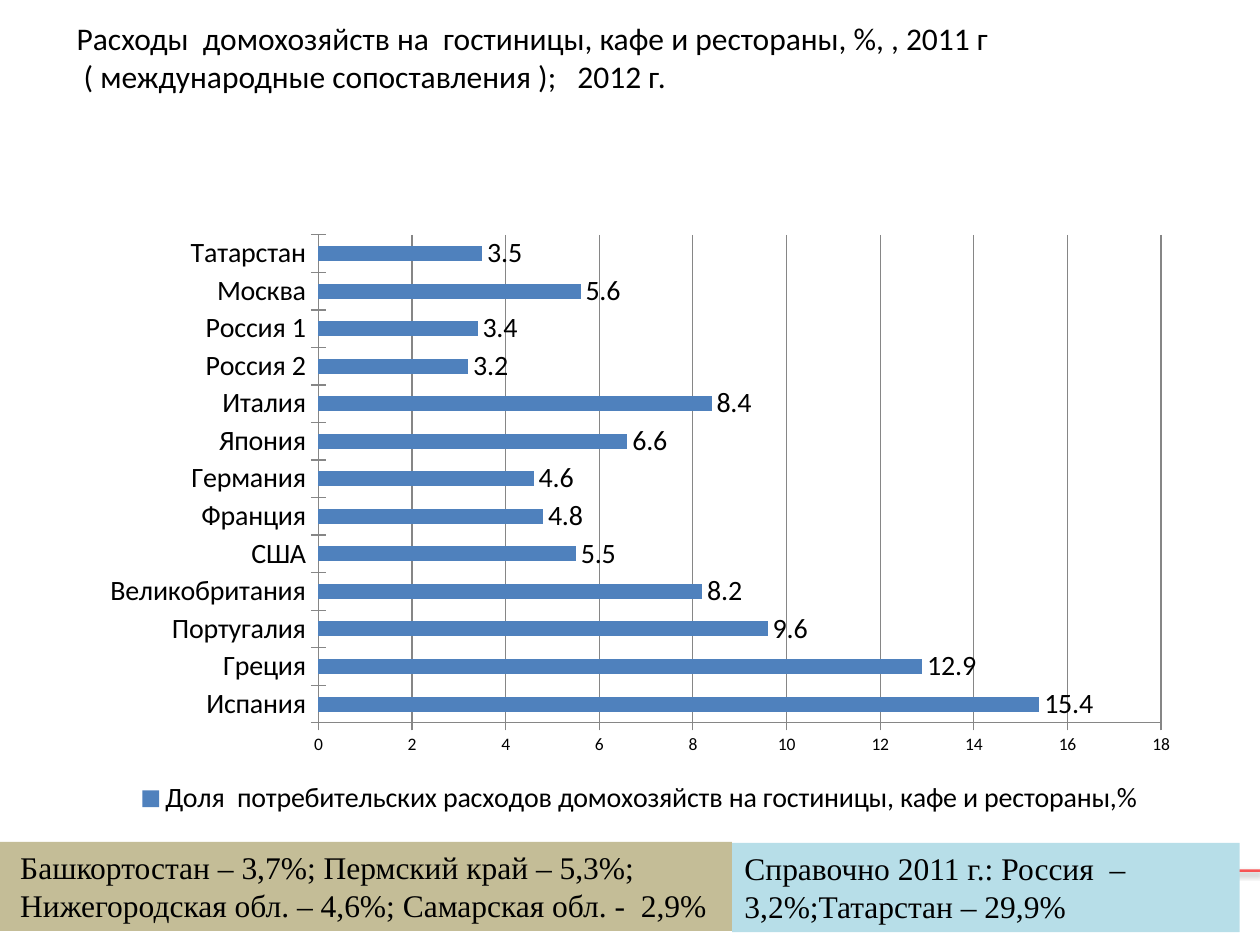
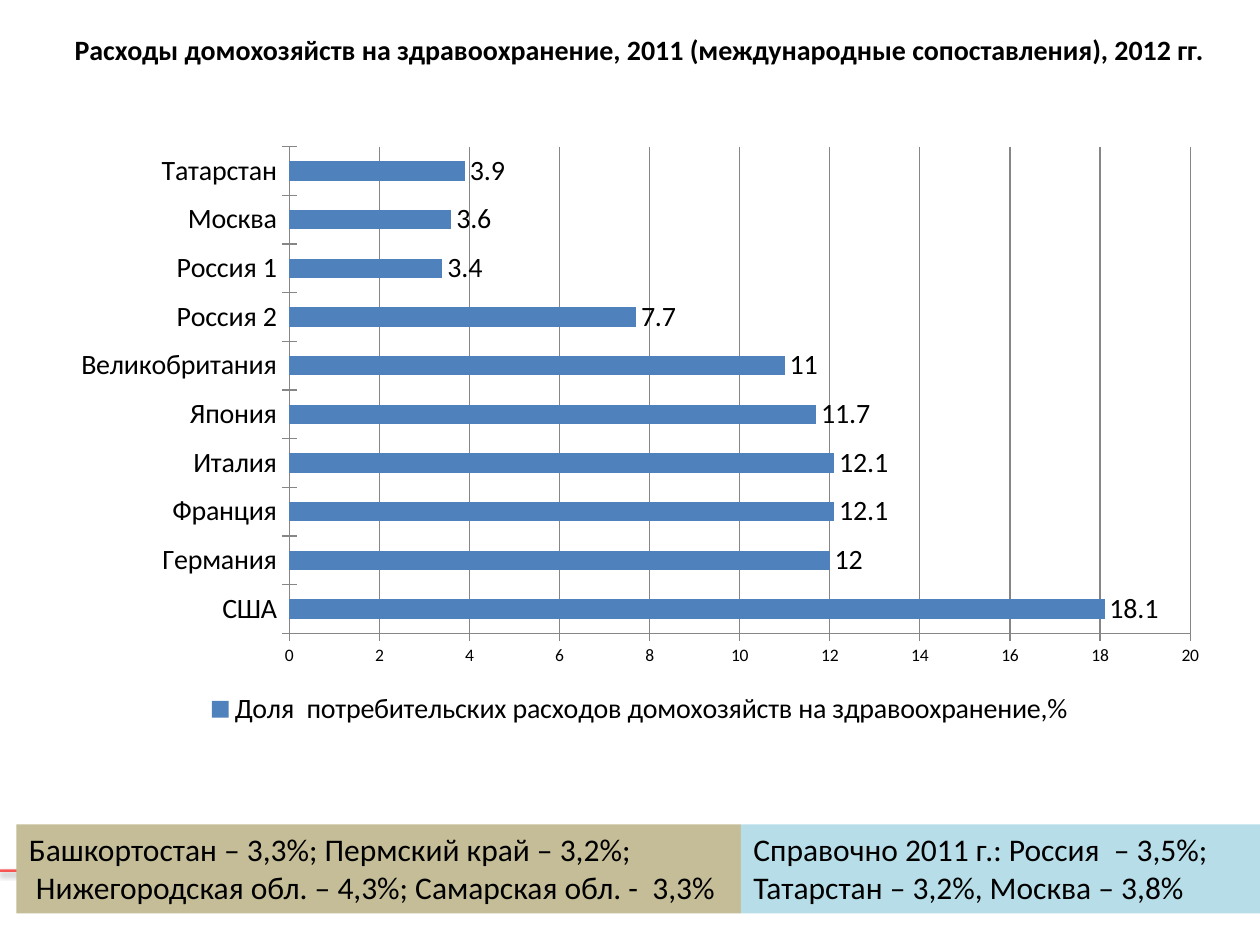
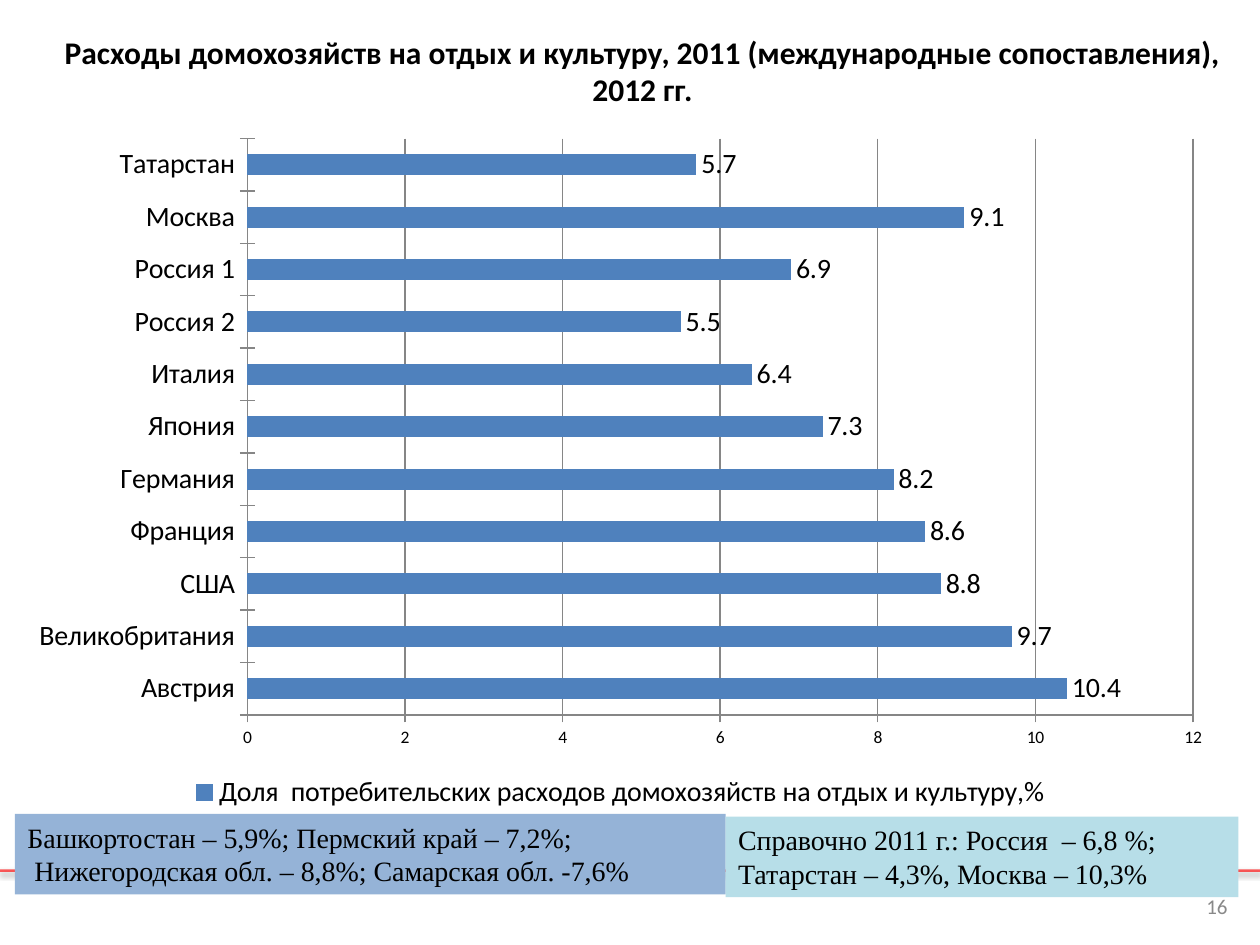
import lxml.etree
import pptx
import pptx.chart.data
import pptx.dml.color
import pptx.enum.chart
import pptx.enum.shapes
import pptx.enum.text
import pptx.oxml
import pptx.oxml.ns
import pptx.util

Pt = pptx.util.Pt
ALIGN = pptx.enum.text.PP_ALIGN
WIDTH, HEIGHT = 720, 540
SANS, SERIF = "Calibri", "Times New Roman"
COLORS = {
    "text": "000000",
    "number": "898989",
    "rule": "FF0000",
    "axis": "868686",
    "bar": "4F81BD",
    "regions_khaki": "C4BD97",
    "regions_blue": "95B3D7",
    "reference": "B7DEE8",
}
SHADOW = (
    '<a:effectLst xmlns:a="http://schemas.openxmlformats.org/drawingml/2006/main">'
    '<a:outerShdw blurRad="40000" dist="20000" dir="5400000" rotWithShape="0">'
    '<a:srgbClr val="000000"><a:alpha val="38000"/></a:srgbClr>'
    "</a:outerShdw></a:effectLst>"
)


def rgb(name):
    """Return the named colour."""
    return pptx.dml.color.RGBColor.from_string(COLORS[name])


def write(sp, text, size=18, font=SANS, color="text", bold=False,
          align=ALIGN.LEFT, wrap=True, middle=False):
    """Fill a shape with text, one paragraph per line."""
    tf = sp.text_frame
    tf.word_wrap = wrap
    anchor = pptx.enum.text.MSO_ANCHOR
    tf.vertical_anchor = anchor.MIDDLE if middle else anchor.TOP
    for i, line in enumerate(text.split("\n")):
        p = tf.add_paragraph() if i else tf.paragraphs[0]
        p.alignment = align
        r = p.add_run()
        r.text = line
        style_font(r.font, size, font, color, bold)


def style_font(f, size, font=SANS, color="text", bold=False):
    """Set the face, size, weight and colour of a font."""
    f.name, f.size, f.bold = font, Pt(size), bold
    f.color.rgb = rgb(color)


def add_label(s, box, text, **fmt):
    """Add a plain text box."""
    write(s.shapes.add_textbox(*map(Pt, box)), text, **fmt)


def add_panel(s, box, fill, text, **fmt):
    """Add a filled rectangle with text."""
    sp = s.shapes.add_shape(pptx.enum.shapes.MSO_SHAPE.RECTANGLE, *map(Pt, box))
    sp.shadow.inherit = False
    sp.fill.solid()
    sp.fill.fore_color.rgb = rgb(fill)
    sp.line.fill.background()
    write(sp, text, **fmt)


def add_rule(s, y=497.5):
    """Add the translucent red line across the foot of the slide."""
    line = s.shapes.add_connector(
        pptx.enum.shapes.MSO_CONNECTOR.STRAIGHT, 0, Pt(y), Pt(WIDTH), Pt(y))
    line.line.width = Pt(1.5)
    line.line.color.rgb = rgb("rule")
    sp_pr = line._element.spPr
    clr = sp_pr.find(".//" + pptx.oxml.ns.qn("a:srgbClr"))
    lxml.etree.SubElement(clr, pptx.oxml.ns.qn("a:alpha"), val="64000")
    sp_pr.append(pptx.oxml.parse_xml(SHADOW))


def add_bars(s, box, subject, values, maximum):
    """Add the bar chart of spending shares, listed from the bottom up."""
    data = pptx.chart.data.CategoryChartData()
    data.categories = list(values)
    data.add_series(
        f"Доля  потребительских расходов домохозяйств на {subject},%", values.values())
    kinds = pptx.enum.chart
    chart = s.shapes.add_chart(
        kinds.XL_CHART_TYPE.BAR_CLUSTERED, *map(Pt, box), data).chart
    style_font(chart.font, 10)
    chart.has_title = False
    chart.has_legend = True
    chart.legend.position = kinds.XL_LEGEND_POSITION.BOTTOM
    chart.legend.include_in_layout = False
    style_font(chart.legend.font, 16)

    for axis, size in ((chart.category_axis, 16), (chart.value_axis, 10)):
        axis.major_tick_mark = kinds.XL_TICK_MARK.CROSS
        axis.minor_tick_mark = kinds.XL_TICK_MARK.NONE
        axis.format.line.color.rgb = rgb("axis")
        style_font(axis.tick_labels.font, size)
    axis.minimum_scale, axis.maximum_scale, axis.major_unit = 0, maximum, 2
    axis.has_major_gridlines = True
    axis.major_gridlines.format.line.color.rgb = rgb("axis")

    plot = chart.plots[0]
    plot.vary_by_categories = False
    plot.gap_width = 150
    fill = plot.series[0].format.fill
    fill.solid()
    fill.fore_color.rgb = rgb("bar")
    plot.has_data_labels = True
    labels = plot.data_labels
    labels.show_value = True
    labels.position = kinds.XL_LABEL_POSITION.OUTSIDE_END
    style_font(labels.font, 16)


def add_slide(prs):
    """Add a blank slide with the shared red line."""
    s = prs.slides.add_slide(prs.slide_layouts[6])
    add_rule(s)
    return s


def hotels_slide(prs):
    """Build the slide on hotels, cafes and restaurants."""
    s = add_slide(prs)
    add_label(s, (36.7, 7.2, 671, 51),
              "Расходы  домохозяйств на  гостиницы, кафе и рестораны, %, , 2011 г\n"
              " ( международные сопоставления );   2012 г.")
    add_panel(s, (0, 481, 418.3, 51), "regions_khaki",
              " Башкортостан – 3,7%; Пермский край – 5,3%;\n"
              " Нижегородская обл. – 4,6%; Самарская обл. -  2,9%",
              font=SERIF, wrap=False)
    add_panel(s, (418.3, 481.7, 290, 51), "reference",
              "Справочно 2011 г.: Россия  – 3,2%;Татарстан – 29,9%", font=SERIF)
    add_bars(s, (50.4, 127.4, 630.7, 342), "гостиницы, кафе и рестораны", {
        "Испания": 15.4, "Греция": 12.9, "Португалия": 9.6,
        "Великобритания": 8.2, "США": 5.5, "Франция": 4.8, "Германия": 4.6,
        "Япония": 6.6, "Италия": 8.4, "Россия 2": 3.2, "Россия 1": 3.4,
        "Москва": 5.6, "Татарстан": 3.5}, 18)


def health_slide(prs):
    """Build the slide on health care."""
    s = add_slide(prs)
    add_label(s, (25.2, 15.1, 680.4, 26.6),
              "Расходы домохозяйств на здравоохранение, 2011 "
              "(международные сопоставления), 2012 гг.",
              size=16, bold=True, align=ALIGN.CENTER)
    add_panel(s, (9.4, 471, 414, 51), "regions_khaki",
              "Башкортостан – 3,3%; Пермский край – 3,2%;\n"
              " Нижегородская обл. – 4,3%; Самарская обл. -  3,3%")
    add_panel(s, (423.4, 471, 296.6, 51), "reference",
              "Справочно 2011 г.: Россия  – 3,5%;\n"
              "Татарстан – 3,2%, Москва – 3,8%")
    add_bars(s, (33.1, 77, 665.3, 341.3), "здравоохранение", {
        "США": 18.1, "Германия": 12, "Франция": 12.1, "Италия": 12.1,
        "Япония": 11.7, "Великобритания": 11, "Россия 2": 7.7,
        "Россия 1": 3.4, "Москва": 3.6, "Татарстан": 3.9}, 20)


def culture_slide(prs):
    """Build the slide on leisure and culture."""
    s = add_slide(prs)
    add_label(s, (671.8, 503.3, 36.7, 28.8), "16", size=12, color="number",
              align=ALIGN.RIGHT, middle=True)
    add_bars(s, (8.6, 71.3, 692, 394.6), "отдых и культуру", {
        "Австрия": 10.4, "Великобритания": 9.7, "США": 8.8, "Франция": 8.6,
        "Германия": 8.2, "Япония": 7.3, "Италия": 6.4, "Россия 2": 5.5,
        "Россия 1": 6.9, "Москва": 9.1, "Татарстан": 5.7}, 12)
    add_panel(s, (8.6, 465.1, 406.1, 46), "regions_blue",
              "Башкортостан – 5,9%; Пермский край – 7,2%;\n"
              " Нижегородская обл. – 8,8%; Самарская обл. -7,6%",
              size=16, font=SERIF)
    add_panel(s, (414.7, 466.6, 293, 46), "reference",
              "Справочно 2011 г.: Россия  – 6,8 %;\n"
              "Татарстан – 4,3%, Москва – 10,3%", size=16, font=SERIF)
    add_label(s, (14.4, 15.1, 705.6, 51),
              "Расходы домохозяйств на отдых и культуру, 2011 "
              "(международные сопоставления), 2012 гг.",
              bold=True, align=ALIGN.CENTER)


def main():
    """Build and save the presentation."""
    prs = pptx.Presentation()
    prs.slide_width, prs.slide_height = Pt(WIDTH), Pt(HEIGHT)
    hotels_slide(prs)
    health_slide(prs)
    culture_slide(prs)
    prs.save("out.pptx")


if __name__ == "__main__":
    main()
